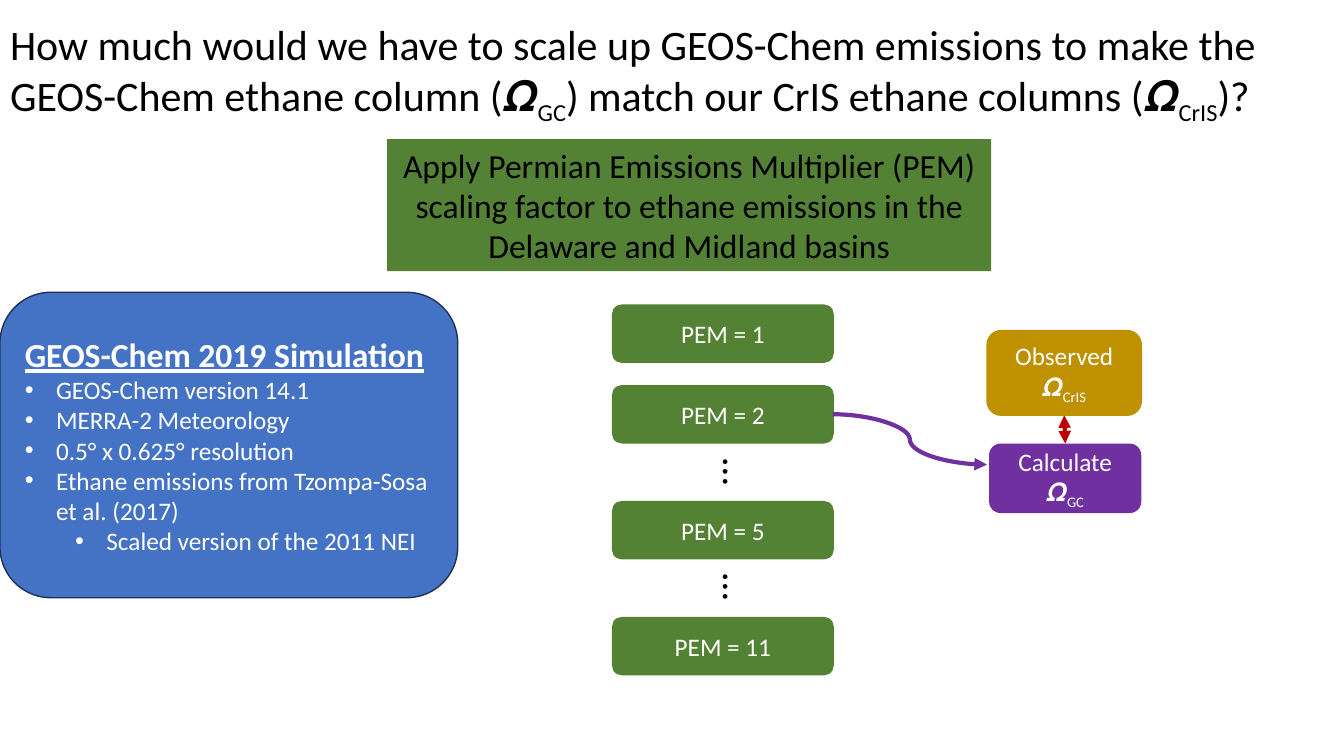
from dataclasses import dataclass

from lxml import etree
from pptx import Presentation
from pptx import util as u
from pptx.dml.color import RGBColor
from pptx.enum import shapes, text
from pptx.oxml.ns import qn

PX = 9144  # EMU per px, 100 px to the inch
FONT = "Calibri"
HUES = {
    "black": "000000",
    "white": "FFFFFF",
    "blue": "4472C4",
    "navy": "1E3256",
    "green": "548235",
    "purple": "7030A0",
    "gold": "BF9000",
    "red": "C00000",
}
RECT = shapes.MSO_SHAPE.RECTANGLE
ROUND = shapes.MSO_SHAPE.ROUNDED_RECTANGLE
LEFT, MID = text.PP_ALIGN.LEFT, text.PP_ALIGN.CENTER


@dataclass
class Box:
    x: int
    y: int
    w: int
    h: int
    fill: str
    edge: str = ""
    kind: int = ROUND


@dataclass
class Step:
    label: str
    y: int


def px(n: int) -> int:
    return n * PX


def hue(name: str) -> RGBColor:
    return RGBColor.from_string(HUES[name])


def write(frame, words: str, *, size=18, color="white", align=MID, bold=False,
          line=False, lead=None, mark=0, level=0) -> None:
    """Add a paragraph; parts between bars are subscripts, mark is the bullet indent."""
    para = frame.add_paragraph() if frame.text else frame.paragraphs[0]
    para.alignment, para.level = align, level
    if lead:
        para.line_spacing = lead
    if mark:
        props = para._p.get_or_add_pPr()
        props.set("marL", str(px(mark)))
        props.set("indent", str(-px(31)))
        etree.SubElement(props, qn("a:buFont")).set("typeface", "Arial")
        etree.SubElement(props, qn("a:buChar")).set("char", "•")
    for i, part in enumerate(words.split("|")):
        run = para.add_run()
        run.text = part
        font = run.font
        font.name, font.size, font.bold = FONT, u.Pt(size), bold
        font.underline = line
        font.color.rgb = hue(color)
        if i % 2:
            run._r.get_or_add_rPr().set("baseline", "-25000")


def draw(slide, box: Box):
    shape = slide.shapes.add_shape(box.kind, *map(px, (box.x, box.y, box.w, box.h)))
    shape.shadow.inherit = False
    shape.fill.solid()
    shape.fill.fore_color.rgb = hue(box.fill)
    if box.edge:
        shape.line.color.rgb = hue(box.edge)
        shape.line.width = u.Pt(1)
    else:
        shape.line.fill.background()
    shape.text_frame.word_wrap = True
    shape.text_frame.vertical_anchor = text.MSO_ANCHOR.MIDDLE
    return shape


def link(slide, kind, ends: tuple, color: str, heads: tuple):
    line = slide.shapes.add_connector(kind, *map(px, ends))
    line.line.color.rgb = hue(color)
    line.line.width = u.Pt(3)
    etree.SubElement(line._element.spPr, qn("a:effectLst"))
    for head in heads:
        etree.SubElement(line.line._get_or_add_ln(), qn(head)).set("type", "triangle")
    return line


def main() -> None:
    deck = Presentation()
    deck.slide_width, deck.slide_height = px(1333), px(750)
    slide = deck.slides.add_slide(deck.slide_layouts[5])

    # Title
    title = slide.shapes.title
    title.left, title.top, title.width, title.height = map(px, (0, 0, 1333, 145))
    frame = title.text_frame
    frame.word_wrap = True
    frame.auto_size = text.MSO_AUTO_SIZE.NONE
    frame.vertical_anchor = text.MSO_ANCHOR.MIDDLE
    write(frame, "How much would we have to scale up GEOS-Chem emissions to make the "
          "GEOS-Chem ethane column (𝜴|GC|) match our CrIS ethane columns (𝜴|CrIS|)?",
          size=30, color="black", align=LEFT, lead=0.9)

    # Simulation panel
    frame = draw(slide, Box(0, 290, 454, 303, "blue", "navy")).text_frame
    write(frame, "GEOS-Chem 2019 Simulation", size=24, align=LEFT, bold=True, line=True)
    for fact in ("GEOS-Chem version 14.1", "MERRA-2 Meteorology", "0.5° x 0.625° resolution",
                 "Ethane emissions from Tzompa-Sosa et al. (2017)"):
        write(frame, fact, align=LEFT, mark=31)
    write(frame, "Scaled version of the 2011 NEI", align=LEFT, mark=81, level=1)

    # Multiplier banner
    frame = draw(slide, Box(384, 138, 599, 131, "green", kind=RECT)).text_frame
    write(frame, "Apply Permian Emissions Multiplier (PEM) scaling factor to ethane "
          "emissions in the Delaware and Midland basins", size=24, color="black")

    # Multiplier steps, with dots in the gaps
    for step in (Step("1", 302), Step("2", 382), Step("5", 497), Step("11", 612)):
        shape = draw(slide, Box(607, step.y, 220, 58, "green"))
        write(shape.text_frame, f"PEM = {step.label}")
    for y in (440, 554):
        dots = slide.shapes.add_textbox(*map(px, (709, y, 47, 57)))
        dots.rotation = 90
        dots.text_frame.word_wrap = False
        write(dots.text_frame, "…", size=28, color="black", align=LEFT)

    # Comparison of columns
    link(slide, shapes.MSO_CONNECTOR.CURVE, (826, 411, 979, 461), "purple", ("a:tailEnd",))
    model = draw(slide, Box(981, 440, 151, 69, "purple"))
    write(model.text_frame, "Calculate 𝜴|GC")
    seen = draw(slide, Box(979, 328, 153, 84, "gold", "gold"))
    write(seen.text_frame, "Observed 𝜴|CrIS")
    both = link(slide, shapes.MSO_CONNECTOR.STRAIGHT, (1056, 440, 1055, 412), "red",
                ("a:headEnd", "a:tailEnd"))
    both.begin_connect(model, 0)
    both.end_connect(seen, 2)

    deck.save("out.pptx")


if __name__ == "__main__":
    main()
